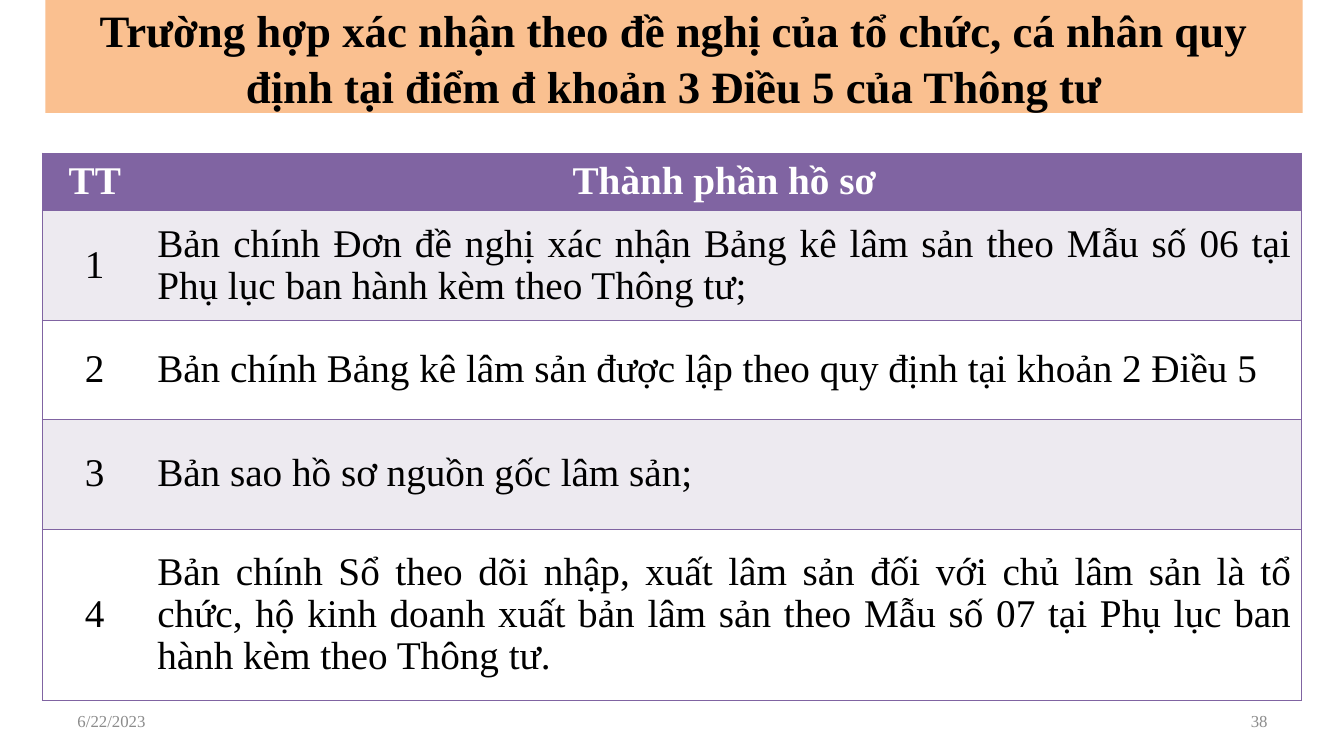
import pptx
import pptx.util
import pptx.dml.color
import pptx.enum.text
import pptx.oxml
import pptx.oxml.ns

Inches = pptx.util.Inches
RGB = pptx.dml.color.RGBColor.from_string
ALIGN = pptx.enum.text.PP_ALIGN
MIDDLE = pptx.enum.text.MSO_ANCHOR.MIDDLE

THEME = {
    "font": "Times New Roman",
    "title": 32, "cell": 28, "footer": 12,
    "peach": "FAC090", "purple": "8064A2", "band": "EDEAF0",
    "white": "FFFFFF", "black": "000000", "grey": "8C8C8C",
}


def write(tf, text, size, color="black", bold=False, align=ALIGN.LEFT, spacing=1.0):
    tf.word_wrap = True
    p = tf.paragraphs[0]
    p.alignment = align
    p.line_spacing = spacing
    r = p.add_run()
    r.text = text
    r.font.name = THEME["font"]
    r.font.size = pptx.util.Pt(THEME[size])
    r.font.bold = bold
    r.font.color.rgb = RGB(THEME[color])


def border(cell, side, visible):
    fill = f'<a:solidFill><a:srgbClr val="{THEME["purple"]}"/></a:solidFill>' if visible else "<a:noFill/>"
    ns = pptx.oxml.ns.nsdecls("a")
    ln = pptx.oxml.parse_xml(f'<a:ln{side} {ns} w="12700">{fill}</a:ln{side}>')
    cell._tc.get_or_add_tcPr().append(ln)


prs = pptx.Presentation()
prs.slide_width, prs.slide_height = Inches(13.33), Inches(7.5)
s = prs.slides.add_slide(prs.slide_layouts[5])

title = s.shapes.title
title.left, title.top = Inches(0.45), Inches(0)
title.width, title.height = Inches(12.47), Inches(1.12)
title.fill.solid()
title.fill.fore_color.rgb = RGB(THEME["peach"])
title.text_frame.auto_size = pptx.enum.text.MSO_AUTO_SIZE.NONE
title.text_frame.vertical_anchor = MIDDLE
write(title.text_frame,
      "Trường hợp xác nhận theo đề nghị của tổ chức, cá nhân quy định tại điểm đ khoản 3 Điều 5 của Thông tư",
      "title", bold=True, align=ALIGN.CENTER, spacing=1.05)

rows = [
    (0.57, "TT", "Thành phần hồ sơ"),
    (1.09, "1", "Bản chính Đơn đề nghị xác nhận Bảng kê lâm sản theo Mẫu số 06 tại Phụ lục ban hành kèm theo Thông tư;"),
    (0.98, "2", "Bản chính Bảng kê lâm sản được lập theo quy định tại khoản 2 Điều 5"),
    (1.09, "3", "Bản sao hồ sơ nguồn gốc lâm sản;"),
    (1.7, "4", "Bản chính Sổ theo dõi nhập, xuất lâm sản đối với chủ lâm sản là tổ chức, hộ kinh doanh xuất bản lâm sản theo Mẫu số 07 tại Phụ lục ban hành kèm theo Thông tư."),
]
table = s.shapes.add_table(len(rows), 2, Inches(0.42), Inches(1.52), Inches(12.49), Inches(5.43)).table
table.first_row = table.horz_banding = False
for col, width in zip(table.columns, (1.04, 11.45)):
    col.width = Inches(width)

for i, (height, *texts) in enumerate(rows):
    table.rows[i].height = Inches(height)
    header = i == 0
    fill = "purple" if header else ("band" if i % 2 else "white")
    for j, text in enumerate(texts):
        cell = table.cell(i, j)
        for side, visible in (("L", j == 0), ("R", j == 1), ("T", True), ("B", True)):
            border(cell, side, visible)
        cell.fill.solid()
        cell.fill.fore_color.rgb = RGB(THEME[fill])
        cell.vertical_anchor = MIDDLE
        write(cell.text_frame, text, "cell", color="white" if header else "black", bold=header,
              align=ALIGN.CENTER if header or j == 0 else ALIGN.JUSTIFY, spacing=0.97)

for left, text, align in ((0.67, "6/22/2023", ALIGN.LEFT), (9.56, "38", ALIGN.RIGHT)):
    sp = s.shapes.add_textbox(Inches(left), Inches(6.95), Inches(3.11), Inches(0.4))
    sp.text_frame.vertical_anchor = MIDDLE
    write(sp.text_frame, text, "footer", color="grey", align=align)

prs.save("out.pptx")
